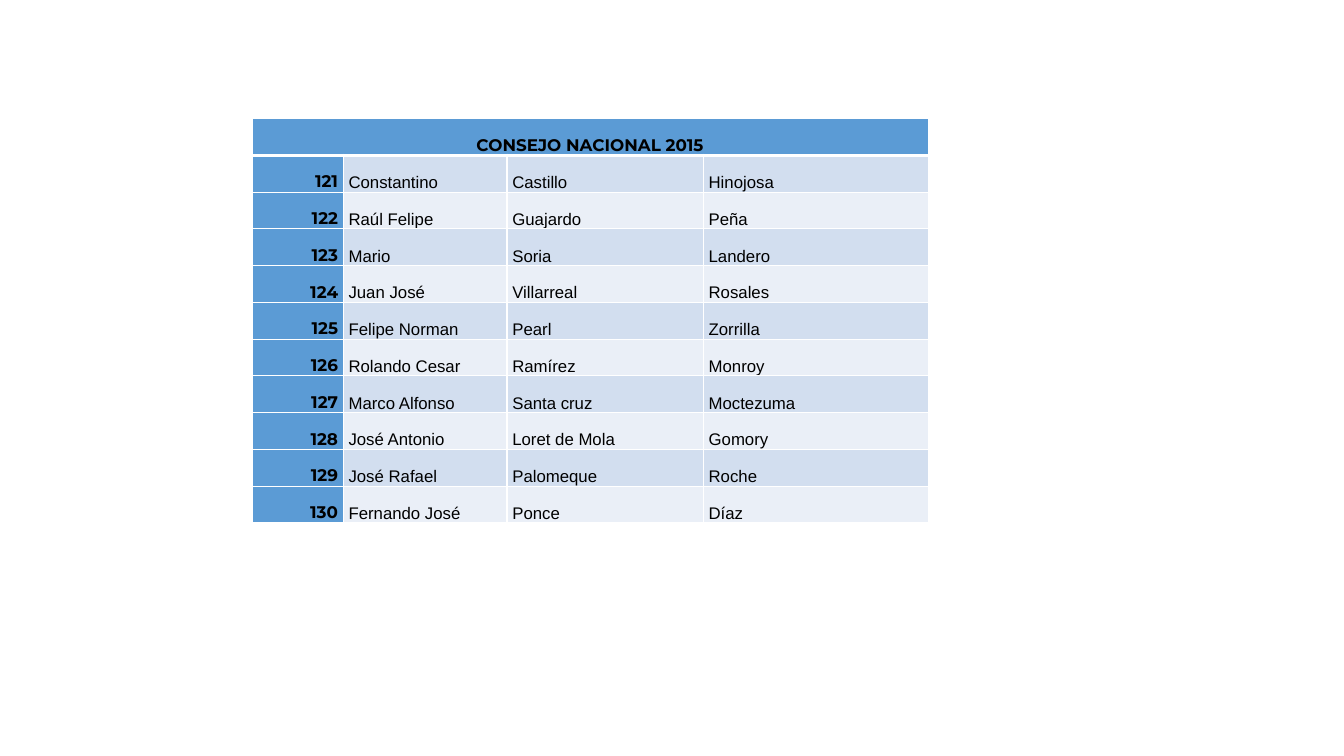
import pptx
import pptx.util
import pptx.dml.color
import pptx.enum.text
import pptx.oxml
import pptx.oxml.ns

PX = 9525
BLUE, PALE, LIGHT = "5B9BD5", "D2DEEF", "EAEFF7"
BLACK, WHITE = "000000", "FFFFFF"
ALIGN = pptx.enum.text.PP_ALIGN
TITLE = "CONSEJO NACIONAL 2015"
FIRST = 121
WIDTHS = [87, 156, 187, 214]
ROW = 35
NAMES = [
    ("Constantino", "Castillo", "Hinojosa"),
    ("Raúl Felipe", "Guajardo", "Peña"),
    ("Mario", "Soria", "Landero"),
    ("Juan José", "Villarreal", "Rosales"),
    ("Felipe Norman", "Pearl", "Zorrilla"),
    ("Rolando Cesar", "Ramírez", "Monroy"),
    ("Marco Alfonso", "Santa cruz", "Moctezuma"),
    ("José Antonio", "Loret de Mola", "Gomory"),
    ("José Rafael", "Palomeque", "Roche"),
    ("Fernando José", "Ponce", "Díaz"),
]


def px(count):
    return pptx.util.Emu(count * PX)


def color(code):
    return pptx.dml.color.RGBColor.from_string(code)


def write(frame, text, font="Arial", bold=False, align=ALIGN.LEFT):
    para = frame.paragraphs[0]
    para.alignment = align
    para.line_spacing = 1.07
    run = para.add_run()
    run.text = text
    run.font.name = font
    run.font.size = pptx.util.Pt(12)
    run.font.bold = bold
    run.font.color.rgb = color(BLACK)


def border(cell, **points):
    """Draw white cell edges; call before the fill is set."""
    props = cell._tc.get_or_add_tcPr()
    for side in "LRTB":
        width = pptx.util.Pt(points.get(side, 1))
        props.append(pptx.oxml.parse_xml(
            f'<a:ln{side} {pptx.oxml.ns.nsdecls("a")} w="{width}">'
            f'<a:solidFill><a:srgbClr val="{WHITE}"/></a:solidFill>'
            f'</a:ln{side}>'))


def style(cell, fill, **points):
    border(cell, **points)
    cell.fill.solid()
    cell.fill.fore_color.rgb = color(fill)
    cell.vertical_anchor = pptx.enum.text.MSO_ANCHOR.BOTTOM
    cell.margin_left = cell.margin_right = px(5)
    cell.margin_top = cell.margin_bottom = 0


def add_grid(slide, left, top):
    count = len(NAMES) + 1
    grid = slide.shapes.add_table(
        count, len(WIDTHS), px(left), px(top),
        px(sum(WIDTHS)), px(ROW * count)).table
    grid.first_row = grid.horz_banding = False
    for col, width in zip(grid.columns, WIDTHS):
        col.width = px(width)
    for row in grid.rows:
        row.height = px(ROW)
    return grid


def fill_head(grid):
    for cell in grid.rows[0].cells:
        style(cell, BLUE, B=3)
    head = grid.cell(0, 0)
    head.merge(grid.cell(0, len(WIDTHS) - 1))
    write(head.text_frame, TITLE, font="Montserrat", bold=True,
          align=ALIGN.CENTER)


def fill_row(grid, index, names):
    edge = 3 if index == 1 else 1
    number, *cells = grid.rows[index].cells
    style(number, BLUE, T=edge)
    write(number.text_frame, str(FIRST + index - 1), font="Montserrat",
          bold=True, align=ALIGN.RIGHT)
    for cell, name in zip(cells, names):
        style(cell, PALE if index % 2 else LIGHT, T=edge)
        write(cell.text_frame, name)


def main():
    deck = pptx.Presentation()
    deck.slide_width, deck.slide_height = px(1280), px(720)
    slide = deck.slides.add_slide(deck.slide_layouts[6])
    grid = add_grid(slide, 240, 113)
    fill_head(grid)
    for index, names in enumerate(NAMES, 1):
        fill_row(grid, index, names)
    deck.save("out.pptx")


if __name__ == "__main__":
    main()
